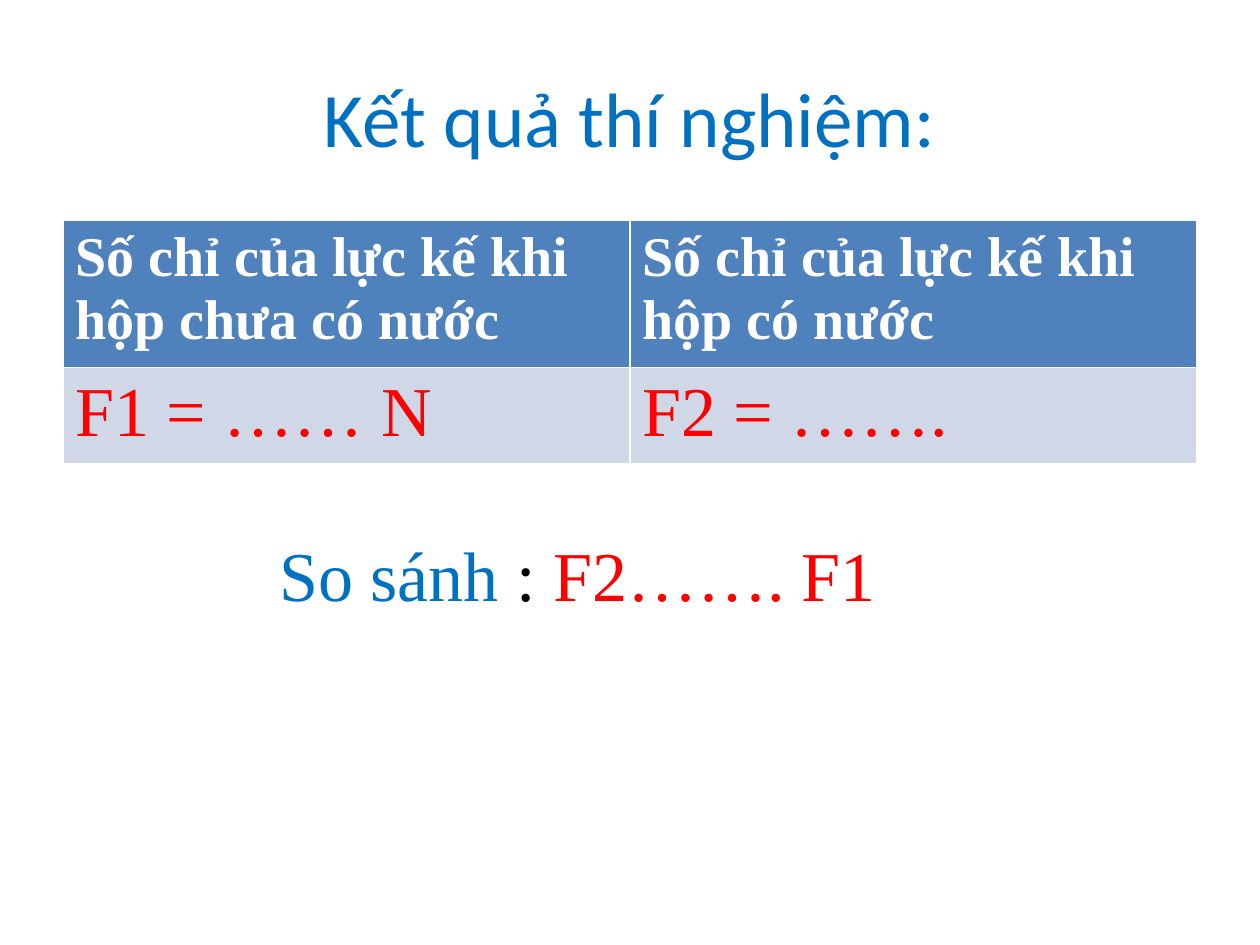
from pptx import Presentation
from pptx.dml.color import RGBColor
from pptx.enum.text import MSO_ANCHOR, PP_ALIGN
from pptx.util import Inches, Pt

BLUE = RGBColor(0x00, 0x70, 0xC0)
RED = RGBColor(0xFF, 0x00, 0x00)
BLACK = RGBColor(0x00, 0x00, 0x00)
WHITE = RGBColor(0xFF, 0xFF, 0xFF)
HEADER_FILL = RGBColor(0x4F, 0x81, 0xBD)
BODY_FILL = RGBColor(0xD0, 0xD8, 0xE8)
SANS = "Calibri"
SERIF = "Times New Roman"


def style_run(run, size, color, font=SERIF, bold=False):
    run.font.name = font
    run.font.size = Pt(size)
    run.font.bold = bold
    run.font.color.rgb = color


def add_centred_line(slide, box, parts, size, font):
    """Place one centred line made of (text, colour) parts in the box."""
    frame = slide.shapes.add_textbox(*map(Inches, box)).text_frame
    frame.word_wrap = True
    frame.vertical_anchor = MSO_ANCHOR.MIDDLE
    line = frame.paragraphs[0]
    line.alignment = PP_ALIGN.CENTER
    for text, color in parts:
        run = line.add_run()
        run.text = text
        style_run(run, size, color, font)


def add_readings(slide, box):
    """Place the table of force readings; the default style draws its borders."""
    rows = [
        # texts, height, size, text colour, fill, bold
        (("Số chỉ của lực kế khi hộp chưa có nước",
          "Số chỉ của lực kế khi hộp có nước"), 1.08, 32, WHITE, HEADER_FILL, True),
        (("F1 = …… N", "F2 = ……."), 0.71, 40, RED, BODY_FILL, False),
    ]
    readings = slide.shapes.add_table(len(rows), 2, *map(Inches, box)).table
    for row, (texts, height, size, color, fill, bold) in zip(readings.rows, rows):
        row.height = Inches(height)
        for cell, text in zip(row.cells, texts):
            cell.fill.solid()
            cell.fill.fore_color.rgb = fill
            cell.text_frame.text = text
            style_run(cell.text_frame.paragraphs[0].runs[0], size, color, bold=bold)


def main():
    prs = Presentation()
    prs.slide_width, prs.slide_height = Inches(10), Inches(7.5)
    slide = prs.slides.add_slide(prs.slide_layouts[6])

    # Title
    add_centred_line(slide, (0.5, 0.3, 9, 1.25),
                     [("Kết quả thí nghiệm:", BLUE)], 44, SANS)
    # Readings without and with water
    add_readings(slide, (0.5, 1.75, 9, 1.79))
    # Comparison of the two forces
    add_centred_line(slide, (0.67, 4.17, 7.83, 0.77),
                     [("So sánh ", BLUE), (": ", BLACK), ("F2……. F1", RED)], 40, SERIF)

    prs.save("out.pptx")


if __name__ == "__main__":
    main()
